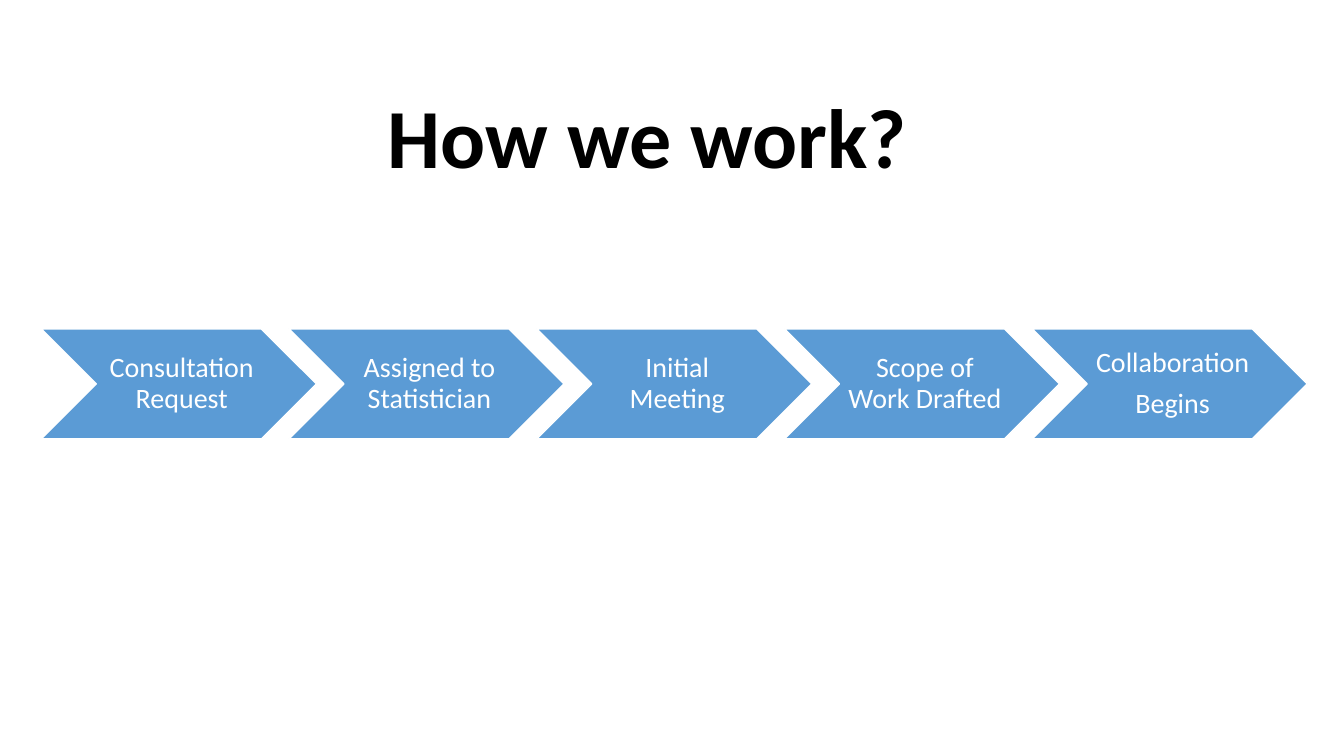
from dataclasses import dataclass

from pptx import Presentation
from pptx.dml.color import RGBColor
from pptx.enum.shapes import MSO_SHAPE as Preset
from pptx.enum.text import MSO_ANCHOR as Anchor, PP_ALIGN as Align
from pptx.util import Pt


@dataclass(frozen=True)
class Theme:
    font: str = "Calibri"
    title_size: float = 60
    step_size: float = 20
    ink: RGBColor = RGBColor(0x00, 0x00, 0x00)
    white: RGBColor = RGBColor(0xFF, 0xFF, 0xFF)
    blue: RGBColor = RGBColor(0x5B, 0x9B, 0xD5)


THEME = Theme()
STEPS = [
    "Consultation Request",
    "Assigned to Statistician",
    "Initial Meeting",
    "Scope of Work Drafted",
    "Collaboration\nBegins",
]
STEP_LEFT, STEP_TOP = 29.5, 234.9
STEP_WIDTH, STEP_HEIGHT = 196.5, 78.6
STEP_PITCH = 176.95


def write(frame, text, *, size, color, bold=False, space_after=0,
          insets=(7.2, 3.6, 7.2, 3.6)):
    frame.word_wrap = True
    frame.vertical_anchor = Anchor.MIDDLE
    (frame.margin_left, frame.margin_top,
     frame.margin_right, frame.margin_bottom) = map(Pt, insets)
    frame.text = text
    for paragraph in frame.paragraphs:
        paragraph.alignment = Align.CENTER
        paragraph.line_spacing = 0.9
        paragraph.space_after = Pt(space_after)
        font = paragraph.font
        font.name, font.size, font.bold = THEME.font, Pt(size), bold
        font.color.rgb = color


def add_title(slide, text):
    title = slide.shapes.add_textbox(Pt(48.2), Pt(49), Pt(828), Pt(104.4))
    write(title.text_frame, text, size=THEME.title_size, color=THEME.ink,
          bold=True)


def add_step(slide, text, left):
    step = slide.shapes.add_shape(Preset.CHEVRON, Pt(left), Pt(STEP_TOP),
                                  Pt(STEP_WIDTH), Pt(STEP_HEIGHT))
    step.shadow.inherit = False
    step.fill.solid()
    step.fill.fore_color.rgb = THEME.blue
    step.line.color.rgb = THEME.white
    step.line.width = Pt(1)
    write(step.text_frame, text, size=THEME.step_size, color=THEME.white,
          space_after=7, insets=(6.3, 2.1, 2.1, 2.1))


def main():
    deck = Presentation()
    deck.slide_width, deck.slide_height = Pt(960), Pt(540)
    slide = deck.slides.add_slide(deck.slide_layouts[6])
    add_title(slide, "How we work?")
    for index, text in enumerate(STEPS):
        add_step(slide, text, STEP_LEFT + index * STEP_PITCH)
    deck.save("out.pptx")


if __name__ == "__main__":
    main()
